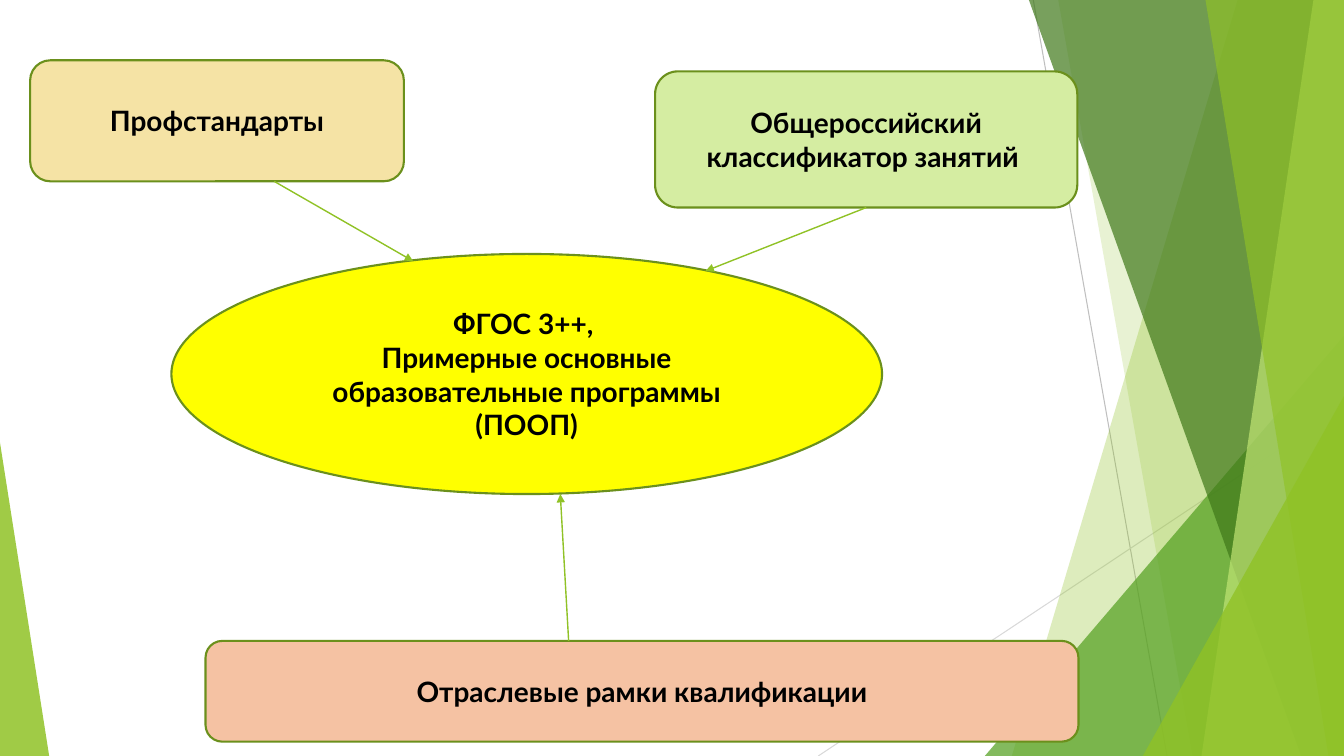
import lxml.etree
import pptx
import pptx.util
import pptx.dml.color
import pptx.enum.shapes
import pptx.enum.text
import pptx.oxml.ns

Cm = pptx.util.Cm
Pt = pptx.util.Pt
qn = pptx.oxml.ns.qn
SHAPE = pptx.enum.shapes.MSO_SHAPE
W, H = 33.87, 19.05
GREEN, OUTLINE = "90C226", "6B901C"


def rgb(value):
    return pptx.dml.color.RGBColor.from_string(value)


def add_xml(parent, tag, **attrs):
    el = lxml.etree.SubElement(parent, qn(tag))
    for name, value in attrs.items():
        el.set(name, str(value))


def paint(sp, color, alpha=100, line=None):
    sp.shadow.inherit = False
    sp.fill.solid()
    sp.fill.fore_color.rgb = rgb(color)
    if alpha < 100:
        clr = sp._element.spPr.find(".//" + qn("a:srgbClr"))
        add_xml(clr, "a:alpha", val=alpha * 1000)
    if line:
        sp.line.color.rgb = rgb(line)
        sp.line.width = Pt(1.5)
    else:
        sp.line.fill.background()


def add_text(sp, *lines, size=20, font="Lato", color="000000", bold=True):
    tf = sp.text_frame
    tf.word_wrap = True
    tf.vertical_anchor = pptx.enum.text.MSO_ANCHOR.MIDDLE
    for i, line in enumerate(lines):
        p = tf.add_paragraph() if i else tf.paragraphs[0]
        p.alignment = pptx.enum.text.PP_ALIGN.CENTER
        r = p.add_run()
        r.text = line
        r.font.size = Pt(size)
        r.font.name = font
        r.font.bold = bold
        r.font.color.rgb = rgb(color)


def add_node(s, kind, box, color, *lines):
    sp = s.shapes.add_shape(kind, *map(Cm, box))
    paint(sp, color, line=OUTLINE)
    add_text(sp, *lines)
    return sp


def add_line(s, x1, y1, x2, y2, color, width, arrow=False):
    c = s.shapes.add_connector(pptx.enum.shapes.MSO_CONNECTOR.STRAIGHT,
                               Cm(x1), Cm(y1), Cm(x2), Cm(y2))
    c.line.color.rgb = rgb(color)
    c.line.width = Pt(width)
    spPr = c._element.spPr
    if arrow:
        add_xml(spPr.find(qn("a:ln")), "a:tailEnd", type="triangle")
    add_xml(spPr, "a:effectLst")
    return c


def add_band(s, top_x, bottom_x, color, alpha):
    """Full-height band from a slanted left side to the right slide edge."""
    fb = s.shapes.build_freeform(Cm(top_x), 0)
    fb.add_line_segments([(Cm(W), 0), (Cm(W), Cm(H)), (Cm(bottom_x), Cm(H))])
    paint(fb.convert_to_shape(), color, alpha)


def add_corner(s, x, y, width, apex, color, alpha):
    """Triangle standing on the bottom edge of the slide."""
    sp = s.shapes.add_shape(SHAPE.ISOSCELES_TRIANGLE, Cm(x), Cm(y), Cm(width), Cm(H - y))
    sp.adjustments[0] = apex
    paint(sp, color, alpha)


def add_backdrop(s):
    add_line(s, 26.04, 0, 29.41, H, "BFBFBF", 0.75)
    add_line(s, W, 10.24, 20.62, H, "D9D9D9", 0.75)
    add_band(s, 31.19, 25.5, GREEN, 30)
    add_band(s, 26.67, 30.05, GREEN, 20)
    add_corner(s, 24.82, 8.46, W - 24.82, 1, "54A021", 72)
    add_band(s, 25.93, 32.79, "3F7819", 70)
    add_band(s, 33.1, 30.28, "C0E474", 70)
    add_band(s, 30.38, 33.48, GREEN, 65)
    add_corner(s, 28.8, 9.98, W - 28.8, 1, GREEN, 80)
    add_corner(s, 0, 11.15, 1.24, 0, GREEN, 85)


def main():
    prs = pptx.Presentation()
    prs.slide_width, prs.slide_height = Cm(W), Cm(H)
    s = prs.slides.add_slide(prs.slide_layouts[6])
    add_backdrop(s)

    # Central programme and its three sources
    add_node(s, SHAPE.OVAL, (4.32, 6.4, 17.91, 6.05), "FFFF00", "ФГОС 3++, ",
             "Примерные основные образовательные программы (ПООП)")
    add_node(s, SHAPE.ROUNDED_RECTANGLE, (0.76, 1.52, 9.42, 3.05), "F5E3A5",
             "Профстандарты")
    classifier = add_node(s, SHAPE.ROUNDED_RECTANGLE, (16.51, 1.8, 10.64, 3.43),
                          "D5EDA2", "Общероссийский классификатор занятий ")
    add_node(s, SHAPE.ROUNDED_RECTANGLE, (5.18, 16.15, 22, 2.54), "F5C2A3",
             "Отраслевые рамки квалификации")

    # Arrows to the centre
    add_line(s, 6.91, 4.57, 10.41, 6.58, GREEN, 1, arrow=True)
    c = add_line(s, 21.83, 5.23, 17.78, 6.83, GREEN, 1, arrow=True)
    c.begin_connect(classifier, 2)
    add_line(s, 14.33, 16.15, 14.12, 12.45, GREEN, 1, arrow=True)

    prs.save("out.pptx")


if __name__ == "__main__":
    main()
